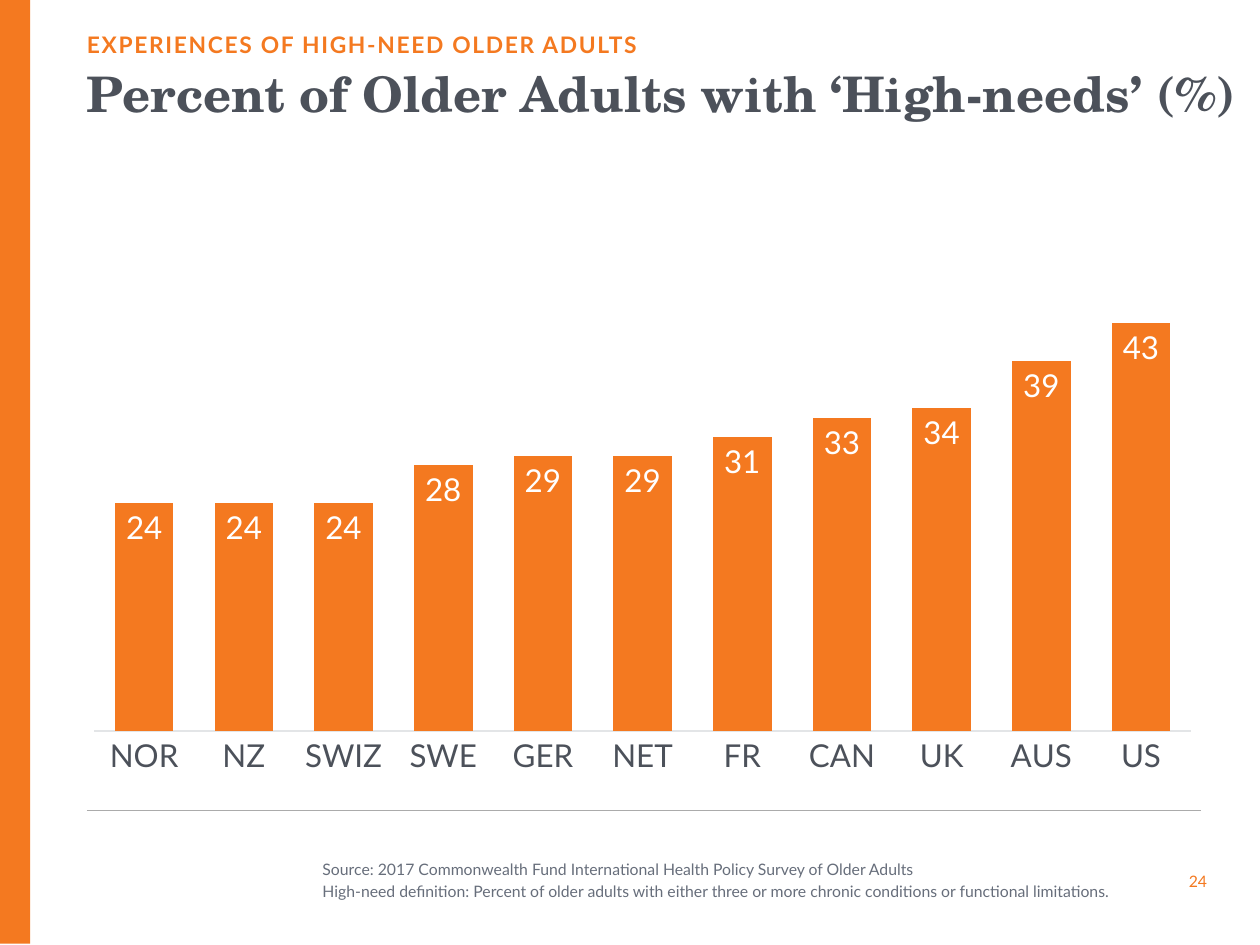
from lxml import etree
from pptx import Presentation
from pptx.chart.data import CategoryChartData
from pptx.dml.color import RGBColor
from pptx.enum.chart import XL_CHART_TYPE, XL_LABEL_POSITION, XL_TICK_LABEL_POSITION, XL_TICK_MARK
from pptx.enum.shapes import MSO_CONNECTOR, MSO_SHAPE
from pptx.enum.text import MSO_ANCHOR, PP_ALIGN
from pptx.oxml.ns import qn
from pptx.util import Inches, Pt

COLUMN = XL_CHART_TYPE.COLUMN_CLUSTERED
INSIDE_END = XL_LABEL_POSITION.INSIDE_END
NO_LABELS = XL_TICK_LABEL_POSITION.NONE
NO_TICK = XL_TICK_MARK.NONE
STRAIGHT = MSO_CONNECTOR.STRAIGHT
RECT = MSO_SHAPE.RECTANGLE
TOP, MIDDLE, BOTTOM = MSO_ANCHOR.TOP, MSO_ANCHOR.MIDDLE, MSO_ANCHOR.BOTTOM
LEFT, RIGHT = PP_ALIGN.LEFT, PP_ALIGN.RIGHT

SANS, SERIF = "Lato", "TeX Gyre Schola"
ORANGE, SLATE, GREY = "F47920", "4C515A", "676E7B"
RULE, AXIS, WHITE = "ABABAB", "E3E5E7", "FFFFFF"

RATES = {
    "NOR": 24, "NZ": 24, "SWIZ": 24, "SWE": 28, "GER": 29, "NET": 29,
    "FR": 31, "CAN": 33, "UK": 34, "AUS": 39, "US": 43,
}
NOTES = [
    "Source: 2017 Commonwealth Fund International Health Policy Survey of Older Adults",
    "High-need definition: Percent of older adults with either three or more chronic "
    "conditions or functional limitations.",
]


def rgb(value):
    return RGBColor.from_string(value)


def style_font(font, size, color, name=SANS, bold=False):
    font.size = Pt(size)
    font.name = name
    font.bold = bold
    font.color.rgb = rgb(color)


def add_text(slide, box, lines, size, color, name=SANS, bold=False, anchor=MIDDLE,
             align=LEFT, wrap=True, tracking=0, gap=0, leading=None):
    tf = slide.shapes.add_textbox(*map(Inches, box)).text_frame
    tf.word_wrap = wrap
    tf.vertical_anchor = anchor
    tf.margin_left = tf.margin_top = tf.margin_right = tf.margin_bottom = 0
    for i, line in enumerate(lines):
        p = tf.add_paragraph() if i else tf.paragraphs[0]
        p.alignment = align
        if i:
            p.space_before = Pt(gap)
        if leading:
            p.line_spacing = leading
        r = p.add_run()
        r.text = line
        style_font(r.font, size, color, name, bold)
        if tracking:
            r.font._element.set("spc", str(tracking * 100))


def add_side_band(slide, box):
    sp = slide.shapes.add_shape(RECT, *map(Inches, box))
    sp.shadow.inherit = False
    sp.fill.solid()
    sp.fill.fore_color.rgb = rgb(ORANGE)
    sp.line.fill.background()


def add_heading(slide, box):
    left, top, width, height = box
    add_text(slide, (left, top, width, 0.27), ["EXPERIENCES OF HIGH-NEED OLDER ADULTS"],
             13, ORANGE, bold=True, anchor=BOTTOM, tracking=1)
    add_text(slide, (left, top + 0.37, width + 0.61, height - 0.37),
             ["Percent of Older Adults with ‘High-needs’ (%)"],
             28, SLATE, name=SERIF, bold=True, anchor=TOP, leading=0.9)


def set_plot_area(chart, x, y, w, h):
    plot_area = chart._chartSpace.chart.plotArea
    for old in plot_area.findall(qn("c:layout")):
        plot_area.remove(old)
    layout = etree.Element(qn("c:layout"))
    manual = etree.SubElement(layout, qn("c:manualLayout"))
    settings = {"layoutTarget": "inner", "xMode": "edge", "yMode": "edge",
                "x": x, "y": y, "w": w, "h": h}
    for tag, value in settings.items():
        etree.SubElement(manual, qn(f"c:{tag}")).set("val", str(value))
    plot_area.insert(0, layout)


def add_rate_chart(slide, box):
    data = CategoryChartData(number_format="0")
    data.categories = list(RATES)
    data.add_series("Series 1", list(RATES.values()))
    chart = slide.shapes.add_chart(COLUMN, *map(Inches, box), data).chart
    chart.has_title = False
    chart.has_legend = False
    style_font(chart.font, 18, SLATE)
    set_plot_area(chart, 0, 0.04, 0.99, 0.85)

    cat = chart.category_axis
    cat.major_tick_mark = cat.minor_tick_mark = NO_TICK
    cat.format.line.color.rgb = rgb(AXIS)
    cat.format.line.width = Pt(0.75)
    style_font(cat.tick_labels.font, 18, SLATE)

    val = chart.value_axis
    val.minimum_scale, val.maximum_scale, val.major_unit = 0, 50, 25
    val.has_major_gridlines = False
    val.tick_label_position = NO_LABELS
    val.format.line.fill.background()

    plot = chart.plots[0]
    plot.gap_width, plot.overlap = 70, -27
    plot.vary_by_categories = False
    series = plot.series[0]
    series.format.fill.solid()
    series.format.fill.fore_color.rgb = rgb(ORANGE)
    labels = series.data_labels
    labels.show_value = True
    labels.position = INSIDE_END
    labels.number_format = "0"
    labels.number_format_is_linked = False
    style_font(labels.font, 18, WHITE)


def add_footer(slide, box):
    left, top, width, height = box
    rule = slide.shapes.add_connector(
        STRAIGHT, Inches(left), Inches(top), Inches(left + width), Inches(top))
    rule.line.color.rgb = rgb(RULE)
    rule.line.width = Pt(0.75)
    etree.SubElement(rule._element.spPr, qn("a:effectLst"))
    add_text(slide, (left + 1.87, top + 0.13, 6.83, height - 0.13), NOTES, 9, GREY, gap=1.8)
    add_text(slide, (left + 8.58, top + 0.45, 0.31, 0.22), ["24"], 9, ORANGE,
             align=RIGHT, wrap=False)


def main():
    prs = Presentation()
    prs.slide_width, prs.slide_height = Inches(10), Inches(7.5)
    slide = prs.slides.add_slide(prs.slide_layouts[6])
    add_side_band(slide, (0, -0.01, 0.24, 7.5))
    add_rate_chart(slide, (0.69, 1.86, 8.85, 4.43))
    add_footer(slide, (0.69, 6.43, 8.84, 0.98))
    add_heading(slide, (0.69, 0.19, 8.85, 1.67))
    prs.save("out.pptx")


if __name__ == "__main__":
    main()
